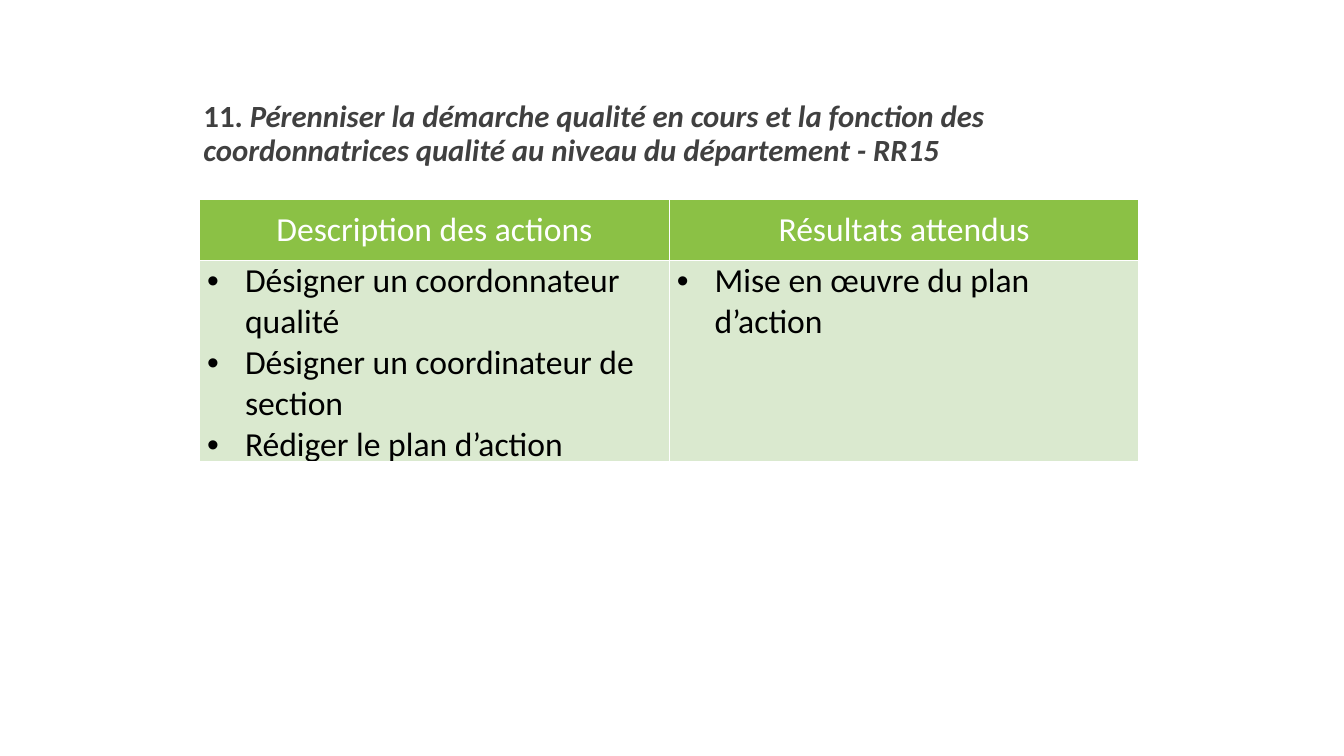
from lxml import etree
from pptx import Presentation
from pptx.dml.color import RGBColor
from pptx.enum.text import MSO_ANCHOR, PP_ALIGN
from pptx.oxml.ns import qn
from pptx.util import Pt

MIDDLE, TOP = MSO_ANCHOR.MIDDLE, MSO_ANCHOR.TOP
CENTER, LEFT = PP_ALIGN.CENTER, PP_ALIGN.LEFT
FONT = "Calibri"
COLORS = {
    "title": "404040",
    "header": "8BC145",
    "body": "DAE9CF",
    "border": "FFFFFF",
    "header_text": "FFFFFF",
    "body_text": "000000",
}
TITLE_RUNS = [
    ("11. ", False),
    ("Pérenniser la démarche qualité en cours et la fonction des "
     "coordonnatrices qualité au niveau du département - RR15", True),
]
PLAN = {
    "Description des actions": [
        "Désigner un coordonnateur qualité",
        "Désigner un coordinateur de section",
        "Rédiger le plan d’action",
    ],
    "Résultats attendus": ["Mise en œuvre du plan d’action"],
}
HEADER_HEIGHT = 43.2
BULLET_INDENT = 27


def color(name):
    """Return the palette colour of that name."""
    return RGBColor.from_string(COLORS[name])


def add_run(paragraph, text, size, color_name, bold=False, italic=False):
    """Append one formatted run to a paragraph."""
    run = paragraph.add_run()
    run.text = text
    font = run.font
    font.name, font.size = FONT, Pt(size)
    font.bold, font.italic = bold, italic
    font.color.rgb = color(color_name)


def add_bullet(paragraph):
    """Give a paragraph a hanging round bullet."""
    properties = paragraph._p.get_or_add_pPr()
    properties.set("marL", str(Pt(BULLET_INDENT)))
    properties.set("indent", str(-Pt(BULLET_INDENT)))
    etree.SubElement(properties, qn("a:buFont")).set("typeface", "Arial")
    etree.SubElement(properties, qn("a:buChar")).set("char", "•")


def add_borders(cell):
    """Draw a thin line on all four sides of a cell."""
    properties = cell._tc.get_or_add_tcPr()
    for side in ("a:lnL", "a:lnR", "a:lnT", "a:lnB"):
        line = etree.SubElement(properties, qn(side), w=str(Pt(1)))
        fill = etree.SubElement(line, qn("a:solidFill"))
        etree.SubElement(fill, qn("a:srgbClr")).set("val", COLORS["border"])


def fill_cell(cell, lines, kind, margins, align, bulleted):
    """Style one table cell and write its lines as paragraphs."""
    add_borders(cell)
    cell.fill.solid()
    cell.fill.fore_color.rgb = color(kind)
    cell.vertical_anchor = TOP
    side, edge = margins
    cell.margin_left = cell.margin_right = Pt(side)
    cell.margin_top = cell.margin_bottom = Pt(edge)
    frame = cell.text_frame
    for index, line in enumerate(lines):
        paragraph = frame.add_paragraph() if index else frame.paragraphs[0]
        paragraph.alignment = align
        if bulleted:
            add_bullet(paragraph)
        add_run(paragraph, line, 24, f"{kind}_text")


def add_title(slide, left, top, width, height):
    """Place the recommendation title in its box."""
    frame = slide.shapes.add_textbox(Pt(left), Pt(top), Pt(width), Pt(height)).text_frame
    frame.word_wrap = True
    frame.vertical_anchor = MIDDLE
    paragraph = frame.paragraphs[0]
    paragraph.line_spacing = 0.9
    for text, italic in TITLE_RUNS:
        add_run(paragraph, text, 22, "title", bold=True, italic=italic)


def add_plan_table(slide, left, top, width, height):
    """Place the table of actions and expected results in its box."""
    table = slide.shapes.add_table(
        2, len(PLAN), Pt(left), Pt(top), Pt(width), Pt(height)).table
    table.rows[0].height = Pt(HEADER_HEIGHT)
    table.rows[1].height = Pt(height - HEADER_HEIGHT)
    for column, (heading, items) in enumerate(PLAN.items()):
        table.columns[column].width = Pt(width / len(PLAN))
        fill_cell(table.cell(0, column), [heading], "header", (7.2, 7.2), CENTER, False)
        fill_cell(table.cell(1, column), items, "body", (5.4, 0), LEFT, True)


def main():
    """Build the slide and save it."""
    deck = Presentation()
    deck.slide_width, deck.slide_height = Pt(960), Pt(540)
    slide = deck.slides.add_slide(deck.slide_layouts[6])
    add_title(slide, 138.24, 54, 685.44, 84.24)
    add_plan_table(slide, 142.6, 142.6, 671, 187.2)
    deck.save("out.pptx")


if __name__ == "__main__":
    main()
